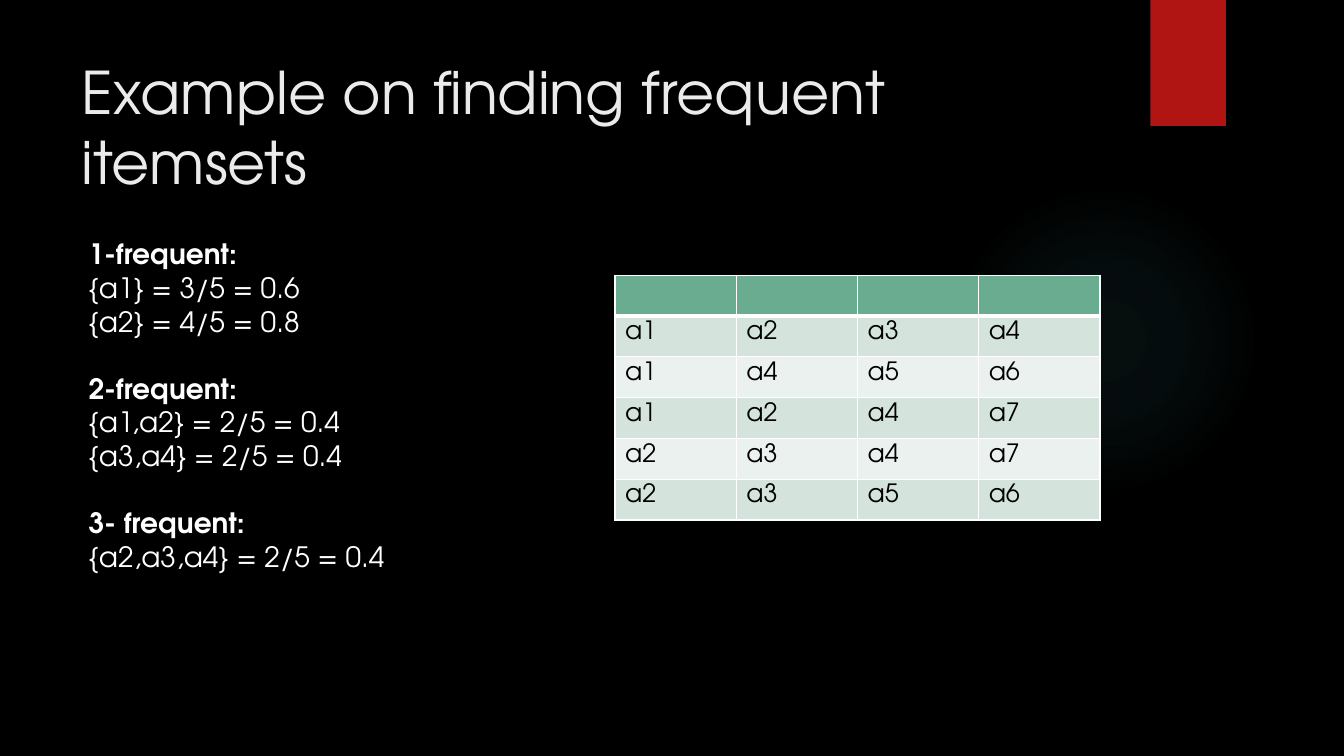
import pptx
import pptx.util
import pptx.dml.color
import pptx.enum.shapes
import pptx.enum.text
import pptx.oxml
import pptx.oxml.ns

Inches = pptx.util.Inches
Pt = pptx.util.Pt
RGB = pptx.dml.color.RGBColor
SHAPE = pptx.enum.shapes.MSO_SHAPE
ANCHOR = pptx.enum.text.MSO_ANCHOR

BLACK = RGB(0x00, 0x00, 0x00)
WHITE = RGB(0xFF, 0xFF, 0xFF)
PALE = RGB(0xEB, 0xEB, 0xEB)
RED = RGB(0xB0, 0x15, 0x13)
CYAN = RGB(0x50, 0xB9, 0xC1)
GREEN = RGB(0x6A, 0xAC, 0x90)
MINT = RGB(0xD4, 0xE3, 0xDB)
MIST = RGB(0xEB, 0xF1, 0xEE)

FACE = "TeX Gyre Adventor"
TITLE = "Example on finding frequent itemsets"
GROUPS = [
    ("1-frequent:", ["{a1} = 3/5 = 0.6", "{a2} = 4/5 = 0.8"]),
    ("2-frequent:", ["{a1,a2} = 2/5 = 0.4", "{a3,a4} = 2/5 = 0.4"]),
    ("3- frequent:", ["{a2,a3,a4} = 2/5 = 0.4"]),
]
BASKETS = ["a1 a2 a3 a4", "a1 a4 a5 a6", "a1 a2 a4 a7", "a2 a3 a4 a7", "a2 a3 a5 a6"]
NS = pptx.oxml.ns.nsdecls("a")


def style(para, size, color, bold=False):
    look = {"name": FACE, "size": Pt(size), "bold": bold}
    for key, value in look.items():
        setattr(para.font, key, value)
    para.font.color.rgb = color


def add_frame(slide, box):
    frame = slide.shapes.add_textbox(*map(Inches, box)).text_frame
    frame.word_wrap = True
    frame.vertical_anchor = ANCHOR.TOP
    return frame


def add_plain(slide, kind, box):
    """Add a shape with neither shadow nor outline."""
    shape = slide.shapes.add_shape(kind, *map(Inches, box))
    shape.shadow.inherit = False
    shape.line.fill.background()
    return shape


def draw_glow(slide, box):
    glow = add_plain(slide, SHAPE.OVAL, box)
    stops = "".join(
        f'<a:gs pos="{pos * 1000}"><a:srgbClr val="{CYAN}">'
        f'<a:alpha val="{alpha * 1000}"/></a:srgbClr></a:gs>'
        for pos, alpha in [(0, 7), (36, 6), (69, 0)])
    fill = pptx.oxml.parse_xml(
        f'<a:gradFill {NS} rotWithShape="1"><a:gsLst>{stops}</a:gsLst>'
        '<a:path path="circle"><a:fillToRect l="50000" t="50000" r="50000" b="50000"/>'
        '</a:path></a:gradFill>')
    glow.element.spPr.find(pptx.oxml.ns.qn("a:prstGeom")).addnext(fill)


def draw_tab(slide, box):
    tab = add_plain(slide, SHAPE.RECTANGLE, box)
    tab.fill.solid()
    tab.fill.fore_color.rgb = RED


def draw_title(slide, box):
    para = add_frame(slide, box).paragraphs[0]
    para.text = TITLE
    style(para, 42, PALE)


def draw_groups(slide, box):
    frame = add_frame(slide, box)
    for i, (head, lines) in enumerate(GROUPS):
        para = frame.add_paragraph() if i else frame.paragraphs[0]
        para.text = head
        style(para, 20, WHITE, True)
        if i:
            para.space_before = Pt(24)
        for line in lines:
            para = frame.add_paragraph()
            para.text = line
            style(para, 20, WHITE)


def edge_cell(cell, widths):
    """Draw the left, right, top and bottom borders in points."""
    props = cell._tc.get_or_add_tcPr()
    for side, width in zip("LRTB", widths):
        props.append(pptx.oxml.parse_xml(
            f'<a:ln{side} {NS} w="{Pt(width)}"><a:solidFill>'
            f'<a:srgbClr val="{WHITE}"/></a:solidFill></a:ln{side}>'))


def draw_table(slide, box):
    rows = [[""] * 4] + [basket.split() for basket in BASKETS]
    table = slide.shapes.add_table(len(rows), 4, *map(Inches, box)).table
    pad = {"margin_left": Inches(0.1), "margin_right": Inches(0.1),
           "margin_top": Inches(0.05), "margin_bottom": Inches(0.05)}
    for r, row in enumerate(rows):
        color = GREEN if r == 0 else (MIST, MINT)[r % 2]
        for c, item in enumerate(row):
            cell = table.cell(r, c)
            for key, value in pad.items():
                setattr(cell, key, value)
            edge_cell(cell, (1, 1, 3 if r == 1 else 1, 3 if r == 0 else 1))
            cell.fill.solid()
            cell.fill.fore_color.rgb = color
            cell.text = item
            style(cell.text_frame.paragraphs[0], 18, BLACK)


def main():
    deck = pptx.Presentation()
    deck.slide_width, deck.slide_height = Inches(13.33), Inches(7.5)
    slide = deck.slides.add_slide(deck.slide_layouts[6])
    slide.background.fill.solid()
    slide.background.fill.fore_color.rgb = BLACK
    draw_glow(slide, (9.41, 1.83, 3.08, 3.08))
    draw_tab(slide, (11.41, 0, 0.75, 1.25))
    draw_title(slide, (0.71, 0.5, 10.29, 1.53))
    draw_table(slide, (6.1, 2.73, 4.81, 2.43))
    draw_groups(slide, (0.78, 2.3, 5.4, 3.47))
    deck.save("out.pptx")


if __name__ == "__main__":
    main()
